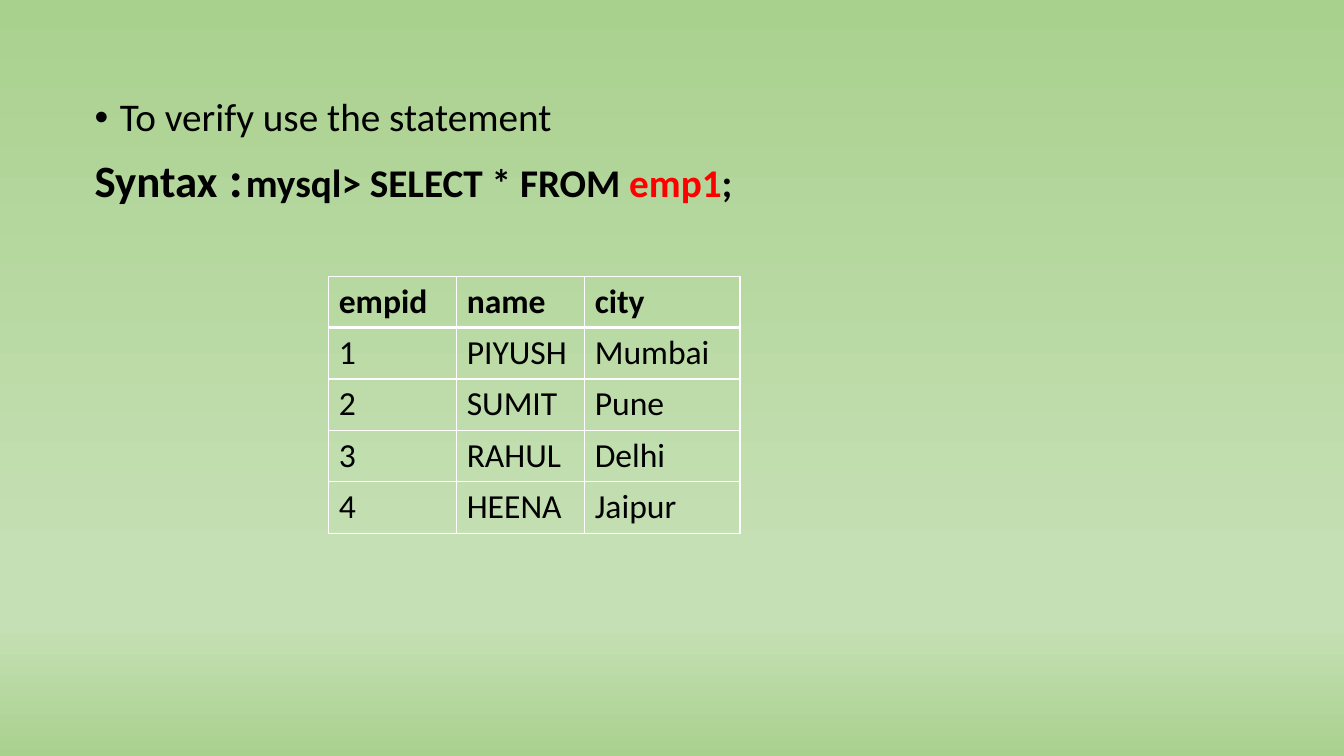
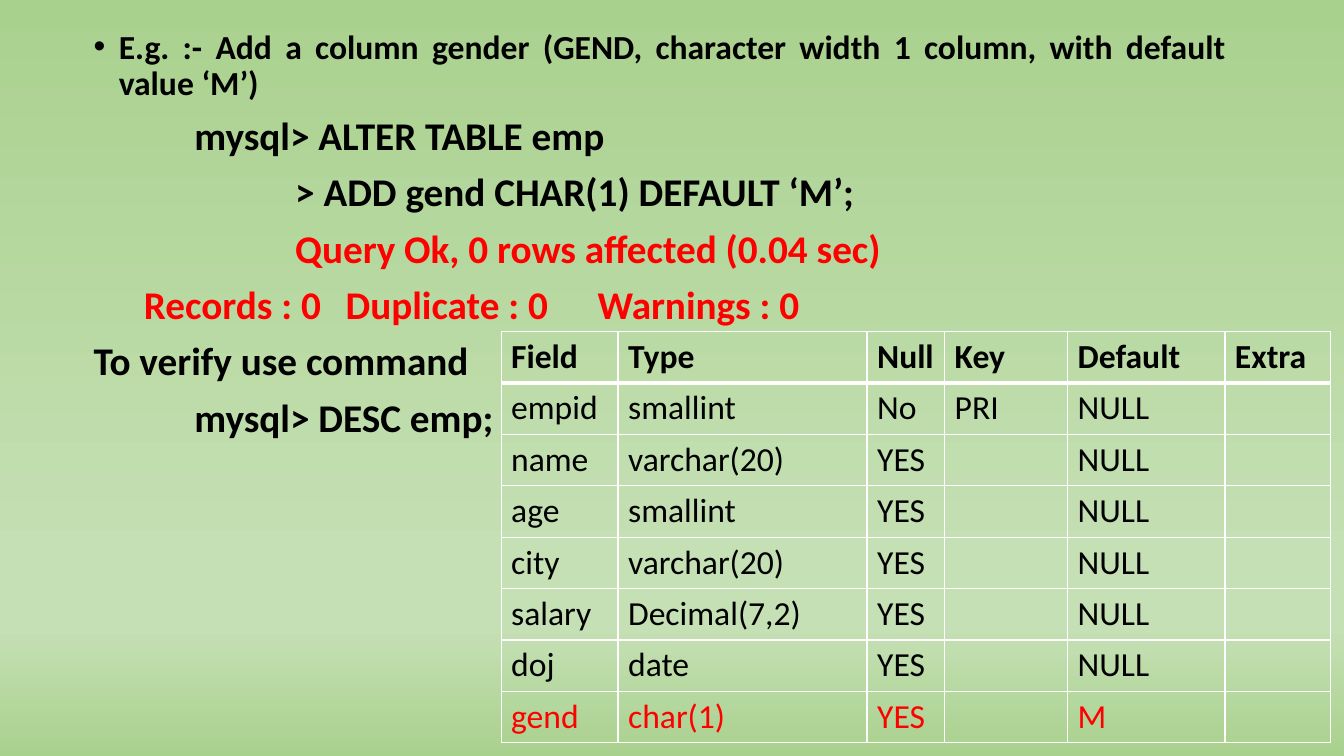
from dataclasses import dataclass

from lxml.etree import SubElement
from pptx import Presentation
from pptx.dml.color import RGBColor
from pptx.enum.text import PP_ALIGN
from pptx.oxml import parse_xml
from pptx.oxml.ns import nsdecls, qn
from pptx.util import Inches, Pt


@dataclass(frozen=True)
class Theme:
    font: str = "Calibri"
    ink: str = "000000"
    output: str = "FF0000"
    border: str = "FFFFFF"
    background: tuple = ((0, "A9D18E"), (74, "C5E0B4"), (83, "C5E0B4"), (100, "A9D18E"))
    table_size: int = 24
    body_size: int = 28
    label_size: int = 32
    colon_size: int = 36


THEME = Theme()


@dataclass(frozen=True)
class Line:
    """A paragraph; runs are (text, size, colour) where they differ within it."""
    text: str = ""
    runs: tuple = ()
    size: int = THEME.body_size
    colour: str = THEME.ink
    bold: bool = True
    bullet: bool = False
    indent: float = 0
    tabs: tuple = ()


ROW_HEIGHT = 0.51

SLIDES = [
    {
        "body_box": (0.84, 0.92, 11.5, 1.3),
        "lines": [
            Line("To verify use the statement", bold=False, bullet=True),
            Line(tabs=(2.15,), runs=(
                ("Syntax", THEME.label_size, THEME.ink),
                (" :\t", THEME.colon_size, THEME.ink),
                ("mysql> SELECT * FROM ", THEME.body_size, THEME.ink),
                ("emp1", THEME.body_size, THEME.output),
                (";", THEME.body_size, THEME.ink),
            )),
        ],
        "table_at": (3.26, 2.74),
        "columns": (1.27, 1.27, 1.54),
        "rows": [
            ("empid", "name", "city"),
            ("1", "PIYUSH", "Mumbai"),
            ("2", "SUMIT", "Pune"),
            ("3", "RAHUL", "Delhi"),
            ("4", "HEENA", "Jaipur"),
        ],
        "new_rows": (),
    },
    {
        "body_box": (0.83, 0.25, 11.43, 5.47),
        "lines": [
            Line("E.g. :- Add a column gender (GEND, character width 1 column, "
                 "with default value ‘M’)", size=THEME.table_size, bullet=True),
            Line("mysql> ALTER TABLE emp", indent=1),
            Line("> ADD gend CHAR(1) DEFAULT ‘M’;", indent=2),
            Line("Query Ok, 0 rows affected (0.04 sec)", indent=2, colour=THEME.output),
            Line("\tRecords : 0\tDuplicate : 0\tWarnings : 0", tabs=(2, 4.38, 6.82),
                 colour=THEME.output),
            Line("To verify use command"),
            Line("mysql> DESC emp;", indent=1),
        ],
        "table_at": (4.97, 3.29),
        "columns": (1.16, 2.47, 0.77, 1.22, 1.56, 1.05),
        "rows": [
            ("Field", "Type", "Null", "Key", "Default", "Extra"),
            ("empid", "smallint", "No", "PRI", "NULL", ""),
            ("name", "varchar(20)", "YES", "", "NULL", ""),
            ("age", "smallint", "YES", "", "NULL", ""),
            ("city", "varchar(20)", "YES", "", "NULL", ""),
            ("salary", "Decimal(7,2)", "YES", "", "NULL", ""),
            ("doj", "date", "YES", "", "NULL", ""),
            ("gend", "char(1)", "YES", "", "M", ""),
        ],
        "new_rows": ("gend",),
    },
]


def set_background(master):
    fill = master.background.fill
    fill.gradient()
    fill.gradient_angle = 270
    stops = master.element.find(".//" + qn("a:gsLst"))
    for stop in list(stops):
        stops.remove(stop)
    for position, colour in THEME.background:
        stop = SubElement(stops, qn("a:gs"), pos=str(position * 1000))
        SubElement(stop, qn("a:srgbClr"), val=colour)


def set_font(font, size, colour, bold):
    font.name = THEME.font
    font.size = Pt(size)
    font.bold = bold
    font.color.rgb = RGBColor.from_string(colour)


def write_line(paragraph, line, first):
    properties = paragraph._p.get_or_add_pPr()
    hanging = 0.25 if line.bullet else 0
    properties.set("marL", str(Inches(line.indent + hanging)))
    properties.set("indent", str(Inches(-hanging)))
    if line.bullet:
        SubElement(properties, qn("a:buFont"), typeface="Arial")
        SubElement(properties, qn("a:buChar"), char="•")
        paragraph.alignment = PP_ALIGN.JUSTIFY
    if line.tabs:
        tab_list = SubElement(properties, qn("a:tabLst"))
        for position in line.tabs:
            SubElement(tab_list, qn("a:tab"), pos=str(Inches(position)), algn="l")
    paragraph.line_spacing = 0.9
    paragraph.space_before = Pt(0 if first else 10)
    set_font(paragraph.font, line.size, line.colour, line.bold)
    if line.text:
        paragraph.add_run().text = line.text
    for text, size, colour in line.runs:
        run = paragraph.add_run()
        run.text = text
        set_font(run.font, size, colour, line.bold)


def add_body(slide, box, lines):
    frame = slide.shapes.add_textbox(*map(Inches, box)).text_frame
    frame.word_wrap = True
    for index, line in enumerate(lines):
        paragraph = frame.add_paragraph() if index else frame.paragraphs[0]
        write_line(paragraph, line, first=index == 0)


def set_borders(cell, widths):
    """Draw the left, right, top and bottom borders, widths in points."""
    properties = cell._tc.get_or_add_tcPr()
    for index, (side, width) in enumerate(zip("LRTB", widths)):
        properties.insert(index, parse_xml(
            f'<a:ln{side} {nsdecls("a")} w="{Pt(width)}"><a:solidFill>'
            f'<a:srgbClr val="{THEME.border}"/></a:solidFill></a:ln{side}>'))


def add_grid(slide, position, columns, rows, new_rows):
    left, top = position
    table = slide.shapes.add_table(
        len(rows), len(columns), Inches(left), Inches(top),
        Inches(sum(columns)), Inches(ROW_HEIGHT * len(rows))).table
    table.horz_banding = False
    for column, width in zip(table.columns, columns):
        column.width = Inches(width)
    for row_index, values in enumerate(rows):
        table.rows[row_index].height = Inches(ROW_HEIGHT)
        colour = THEME.output if values[0] in new_rows else THEME.ink
        rule_above = 3 if row_index == 1 else 1
        rule_below = 3 if row_index == 0 else 1
        for column_index, value in enumerate(values):
            cell = table.cell(row_index, column_index)
            cell.text = value
            cell.fill.background()
            set_font(cell.text_frame.paragraphs[0].font, THEME.table_size, colour,
                     bold=row_index == 0)
            set_borders(cell, (1, 1, rule_above, rule_below))


def main():
    presentation = Presentation()
    presentation.slide_width = Inches(13.33)
    presentation.slide_height = Inches(7.5)
    set_background(presentation.slide_master)
    for content in SLIDES:
        slide = presentation.slides.add_slide(presentation.slide_layouts[6])
        add_body(slide, content["body_box"], content["lines"])
        add_grid(slide, content["table_at"], content["columns"], content["rows"],
                 content["new_rows"])
    presentation.save("out.pptx")


if __name__ == "__main__":
    main()
